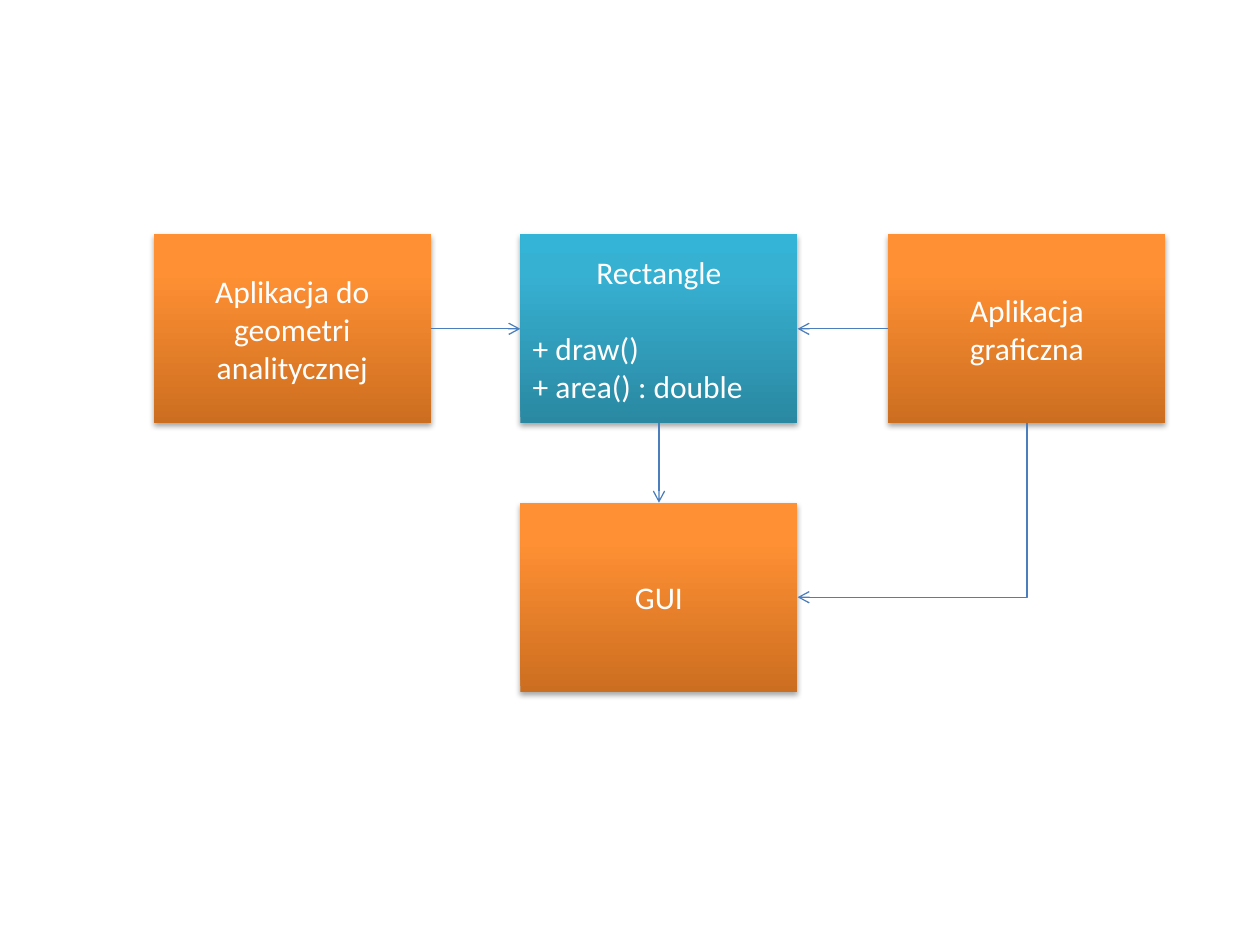
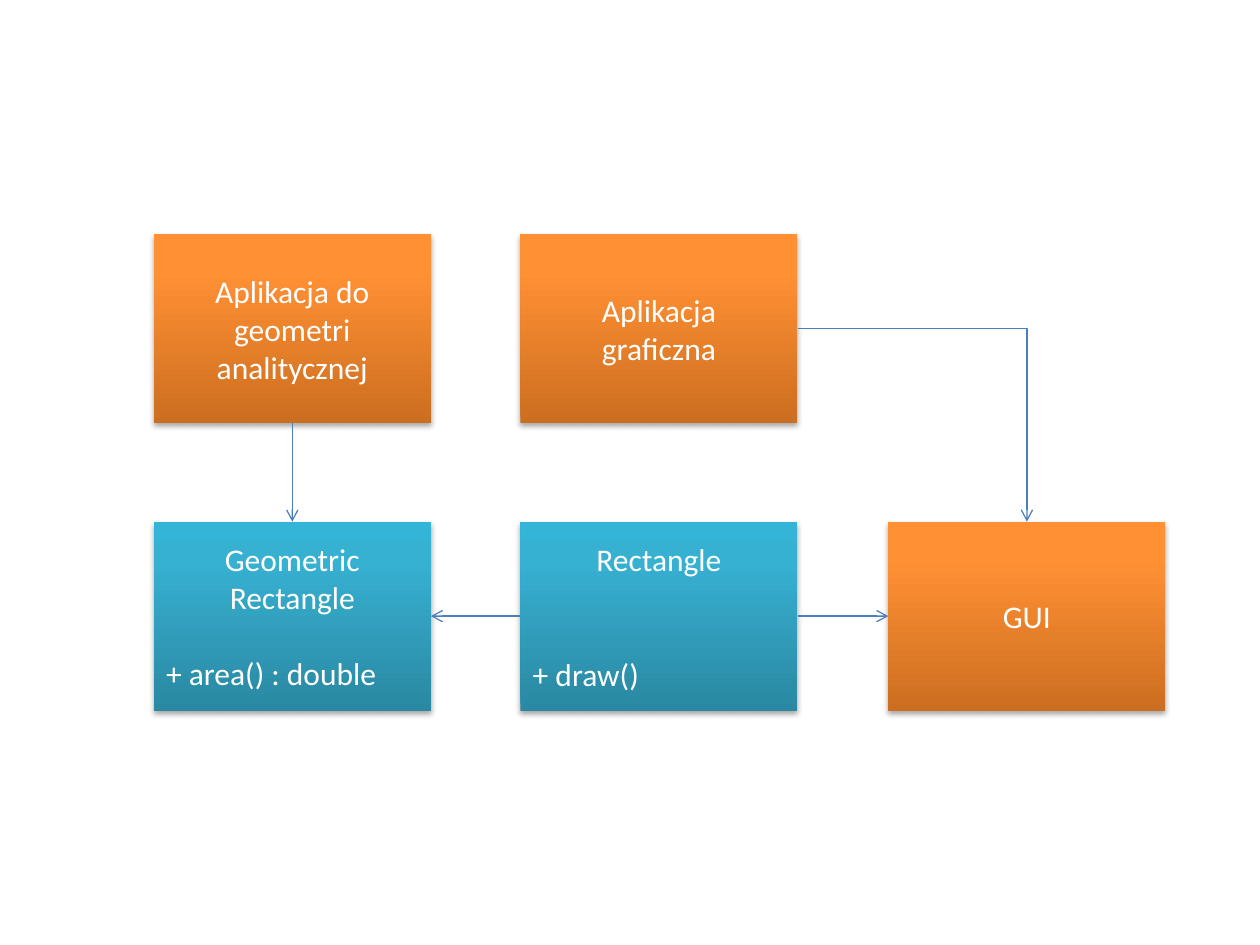
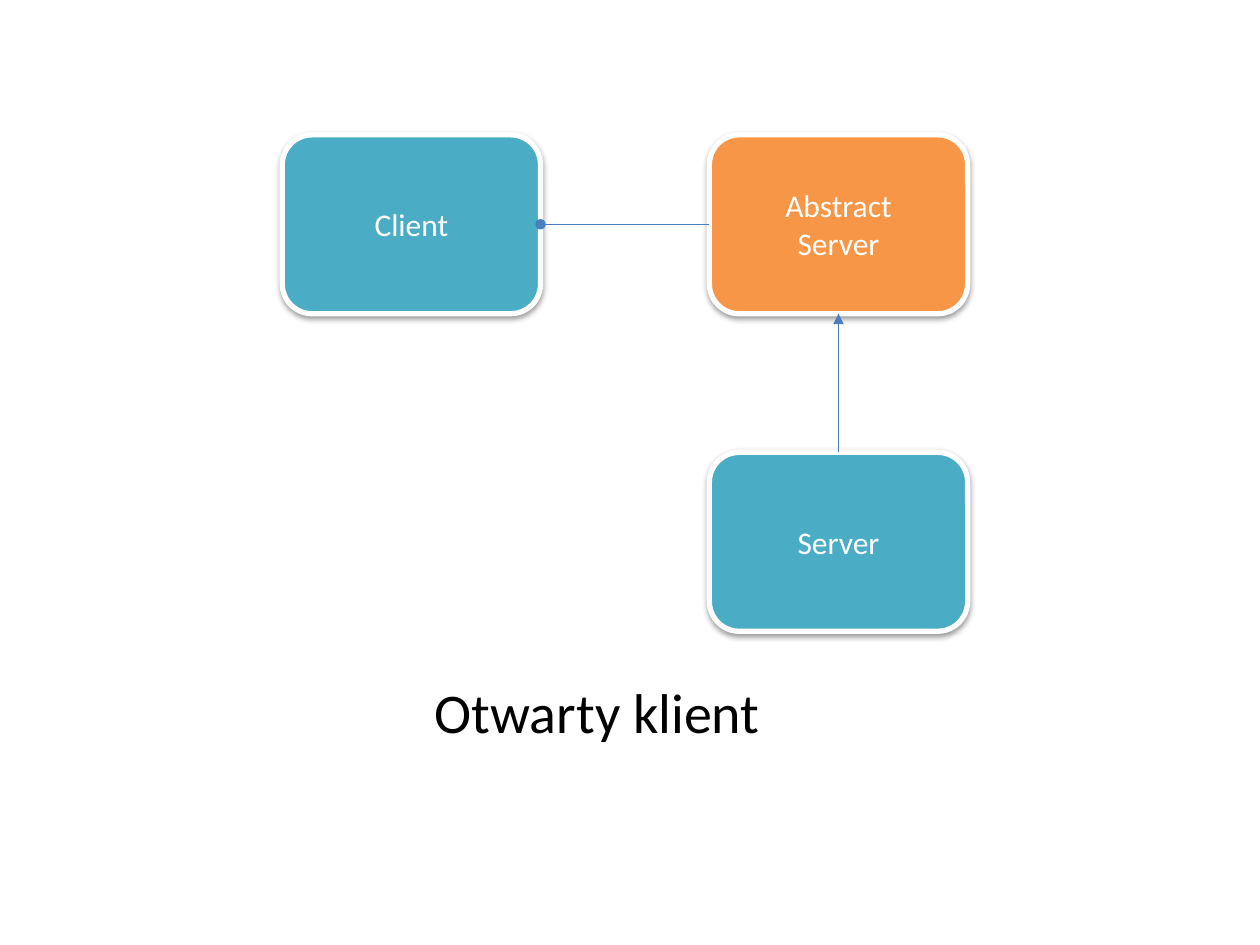
from dataclasses import dataclass
from lxml.etree import SubElement
from pptx import Presentation
from pptx.dml.color import RGBColor
from pptx.enum.shapes import MSO_CONNECTOR, MSO_SHAPE
from pptx.enum.text import MSO_ANCHOR, PP_ALIGN
from pptx.oxml.ns import qn
from pptx.util import Inches, Pt


@dataclass(frozen=True)
class Theme:
    font: str = "Calibri"
    label_size: int = 18
    caption_size: int = 32
    blank_line: int = 22
    white: str = "FFFFFF"
    black: str = "000000"
    connector: str = "4B7EBC"
    teal: str = "4BACC6"
    orange: str = "F79646"
    orange_gradient: tuple = ((0, "CC6E20"), (80, "FF9034"), (100, "FF9136"))
    teal_gradient: tuple = ((0, "2A88A2"), (80, "37B1D2"), (100, "34B4D6"))


theme = Theme()
TOP, LEFT, BOTTOM, RIGHT = range(4)
COLUMNS = (1.22, 4.13, 7.05)
ROW = 1.86
MODULE_SIZE = (2.2, 1.5)
ROLE_SIZE = (2.05, 1.42)


def add_box(slide, position, size, fill, heading, members=(), gap_lines=1):
    gradient = isinstance(fill, tuple)
    preset = MSO_SHAPE.RECTANGLE if gradient else MSO_SHAPE.ROUNDED_RECTANGLE
    shape = slide.shapes.add_shape(preset, *[Inches(value) for value in position + size])
    if gradient:
        shape.line.fill.background()
        shape.fill.gradient()
        shape.fill.gradient_angle = 90
        stops = shape._element.spPr.find(".//" + qn("a:gsLst"))
        stops.clear()
        for percent, color in fill:
            stop = SubElement(stops, qn("a:gs"), pos=str(percent * 1000))
            SubElement(stop, qn("a:srgbClr"), val=color)
    else:
        shape.fill.solid()
        shape.fill.fore_color.rgb = RGBColor.from_string(fill)
        shape.line.color.rgb = RGBColor.from_string(theme.white)
        shape.line.width = Pt(3)

    shape.shadow.inherit = False
    effects = shape._element.spPr.find(qn("a:effectLst"))
    distance, opacity = ("23000", "35000") if gradient else ("20000", "38000")
    shadow = SubElement(effects, qn("a:outerShdw"), blurRad="40000", dist=distance,
                        dir="5400000", rotWithShape="0")
    color = SubElement(shadow, qn("a:srgbClr"), val=theme.black)
    SubElement(color, qn("a:alpha"), val=opacity)

    frame = shape.text_frame
    frame.word_wrap = True
    frame.vertical_anchor = MSO_ANCHOR.MIDDLE
    frame.text = "\n".join((*heading, *members))
    for index, paragraph in enumerate(frame.paragraphs):
        paragraph.alignment = PP_ALIGN.CENTER if index < len(heading) else PP_ALIGN.LEFT
        paragraph.font.name = theme.font
        paragraph.font.size = Pt(theme.label_size)
        paragraph.font.color.rgb = RGBColor.from_string(theme.white)
        if index == len(heading):
            paragraph.space_before = Pt(theme.blank_line * gap_lines)
    return shape


def link(slide, start, start_site, end, end_site, marker="tailEnd", marker_type="arrow", elbow=False):
    kind = MSO_CONNECTOR.ELBOW if elbow else MSO_CONNECTOR.STRAIGHT
    connector = slide.shapes.add_connector(kind, 0, 0, 0, 0)
    connector.begin_connect(start, start_site)
    connector.end_connect(end, end_site)
    properties = connector._element.spPr
    if elbow:
        properties.find(qn("a:prstGeom")).set("prst", "bentConnector2")
        if start_site == BOTTOM:
            left, top, width, height = connector.left, connector.top, connector.width, connector.height
            connector.left = left + (width - height) // 2
            connector.top = top + (height - width) // 2
            connector.width, connector.height = height, width
            properties.xfrm.flipH = False
            properties.xfrm.rot = 90
    connector.line.color.rgb = RGBColor.from_string(theme.connector)
    connector.line.width = Pt(0.75)
    SubElement(properties.find(qn("a:ln")), qn("a:" + marker), type=marker_type)
    SubElement(properties, qn("a:effectLst"))


presentation = Presentation()
presentation.slide_width = Inches(10)
presentation.slide_height = Inches(7.5)
title_only, blank = presentation.slide_layouts[5], presentation.slide_layouts[6]
geometry_label = ["Aplikacja do geometri analitycznej"]
graphics_label = ["Aplikacja", "graficzna"]

slide = presentation.slides.add_slide(blank)
geometry = add_box(slide, (COLUMNS[0], ROW), MODULE_SIZE, theme.orange_gradient, geometry_label)
graphics = add_box(slide, (COLUMNS[2], ROW), MODULE_SIZE, theme.orange_gradient, graphics_label)
gui = add_box(slide, (COLUMNS[1], 3.99), MODULE_SIZE, theme.orange_gradient, ["GUI"])
rectangle = add_box(slide, (COLUMNS[1], ROW), MODULE_SIZE, theme.teal_gradient,
                    ["Rectangle"], ["+ draw()", "+ area() : double"])
link(slide, geometry, RIGHT, rectangle, LEFT)
link(slide, graphics, LEFT, rectangle, RIGHT)
link(slide, rectangle, BOTTOM, gui, TOP)
link(slide, graphics, BOTTOM, gui, RIGHT, elbow=True)

slide = presentation.slides.add_slide(blank)
lower_row = 4.14
geometry = add_box(slide, (COLUMNS[0], ROW), MODULE_SIZE, theme.orange_gradient, geometry_label)
graphics = add_box(slide, (COLUMNS[1], ROW), MODULE_SIZE, theme.orange_gradient, graphics_label)
gui = add_box(slide, (COLUMNS[2], lower_row), MODULE_SIZE, theme.orange_gradient, ["GUI"])
rectangle = add_box(slide, (COLUMNS[1], lower_row), MODULE_SIZE, theme.teal_gradient,
                    ["Rectangle"], ["+ draw()"], gap_lines=2)
geometric_rectangle = add_box(slide, (COLUMNS[0], lower_row), MODULE_SIZE, theme.teal_gradient,
                              ["Geometric", "Rectangle"], ["+ area() : double"])
link(slide, geometry, BOTTOM, geometric_rectangle, TOP)
link(slide, rectangle, RIGHT, gui, LEFT)
link(slide, graphics, RIGHT, gui, TOP, elbow=True)
link(slide, rectangle, LEFT, geometric_rectangle, RIGHT)

slide = presentation.slides.add_slide(title_only)
client = add_box(slide, (2.24, 1.07), ROLE_SIZE, theme.teal, ["Client"])
abstract_server = add_box(slide, (5.63, 1.07), ROLE_SIZE, theme.orange, ["Abstract", "Server"])
server = add_box(slide, (5.63, 3.59), ROLE_SIZE, theme.teal, ["Server"])
link(slide, client, RIGHT, abstract_server, LEFT, marker="headEnd", marker_type="oval")
link(slide, server, TOP, abstract_server, BOTTOM, marker_type="triangle")

title = slide.shapes.title
title.left, title.top, title.width, title.height = [Inches(value) for value in (3.35, 5.32, 2.81, 0.64)]
title.text_frame.text = "Otwarty klient"
title.text_frame.word_wrap = False
paragraph = title.text_frame.paragraphs[0]
paragraph.alignment = PP_ALIGN.LEFT
paragraph.font.name = theme.font
paragraph.font.size = Pt(theme.caption_size)
paragraph.font.color.rgb = RGBColor.from_string(theme.black)

presentation.save("out.pptx")
